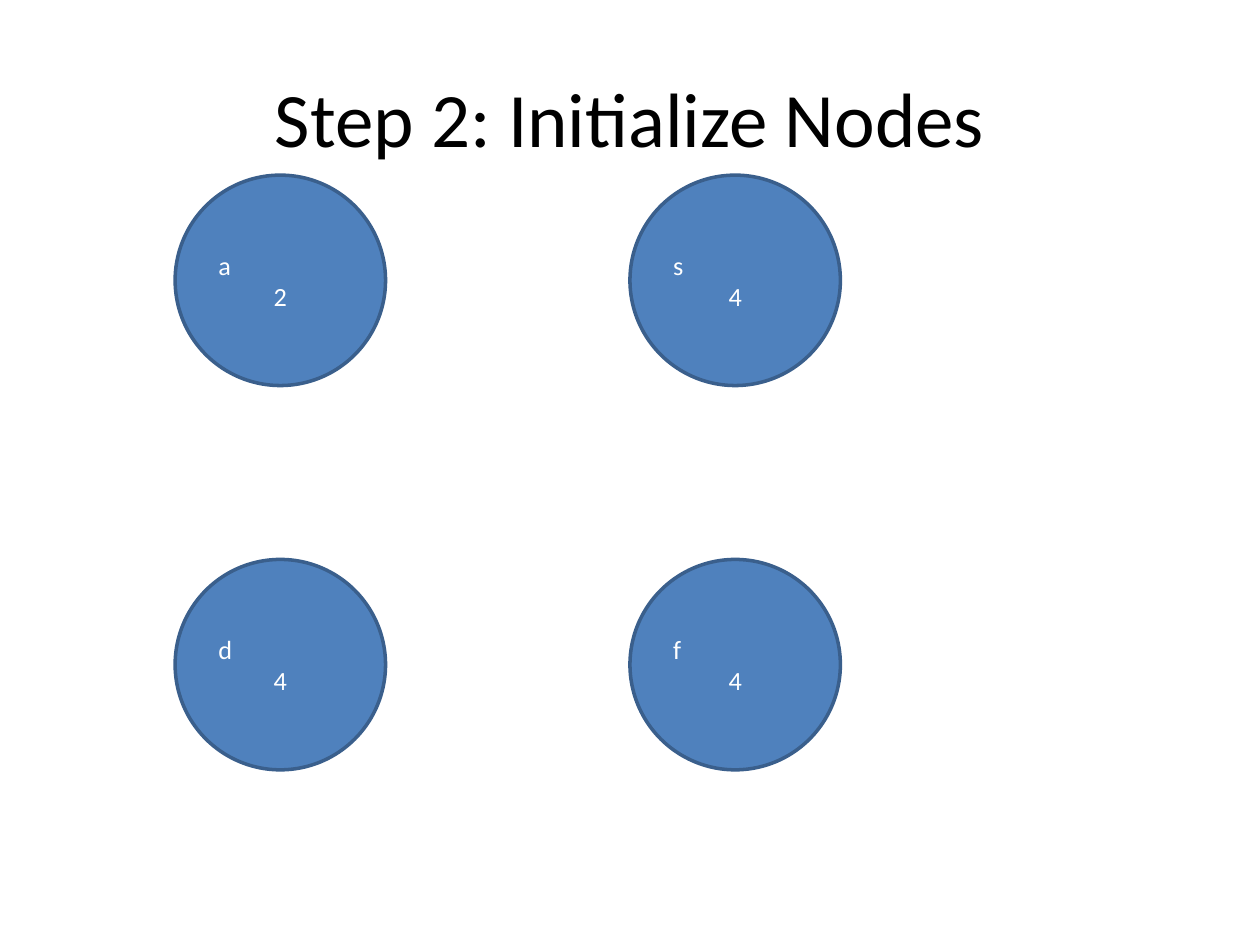
from pptx import Presentation
from pptx.dml.color import RGBColor
from pptx.enum import shapes, text
from pptx.util import Inches, Pt

BLACK = RGBColor(0x00, 0x00, 0x00)
WHITE = RGBColor(0xFF, 0xFF, 0xFF)
NODE_FILL = RGBColor(0x4F, 0x81, 0xBD)
NODE_EDGE = RGBColor(0x3A, 0x5F, 0x8C)
FONT = "Calibri"

DIAMETER = 1.67
COLUMNS = (1.39, 5)
ROWS = (1.39, 4.44)
NODES = ((("a", "2"), ("s", "4")),
         (("d", "4"), ("f", "4")))


def style_paragraph(paragraph, size, color, alignment):
    paragraph.alignment = alignment
    for run in paragraph.runs:
        run.font.name = FONT
        run.font.size = Pt(size)
        run.font.color.rgb = color


def add_title(slide, wording):
    title = slide.shapes.add_textbox(Inches(0.5), Inches(0.3), Inches(9), Inches(1.25))
    frame = title.text_frame
    frame.word_wrap = True
    frame.vertical_anchor = text.MSO_ANCHOR.MIDDLE
    frame.text = wording
    style_paragraph(frame.paragraphs[0], 44, BLACK, text.PP_ALIGN.CENTER)


def add_node(slide, left, top, letter, frequency):
    node = slide.shapes.add_shape(
        shapes.MSO_SHAPE.OVAL, Inches(left), Inches(top), Inches(DIAMETER), Inches(DIAMETER))
    node.shadow.inherit = False
    node.fill.solid()
    node.fill.fore_color.rgb = NODE_FILL
    node.line.color.rgb = NODE_EDGE
    node.line.width = Pt(2)
    frame = node.text_frame
    frame.word_wrap = True
    frame.vertical_anchor = text.MSO_ANCHOR.MIDDLE
    frame.text = f"{letter}\n{frequency}"
    letter_line, frequency_line = frame.paragraphs
    style_paragraph(letter_line, 15, WHITE, text.PP_ALIGN.LEFT)
    style_paragraph(frequency_line, 15, WHITE, text.PP_ALIGN.CENTER)


def main():
    deck = Presentation()
    deck.slide_width, deck.slide_height = Inches(10), Inches(7.5)
    slide = deck.slides.add_slide(deck.slide_layouts[6])
    add_title(slide, "Step 2: Initialize Nodes")
    for top, row in zip(ROWS, NODES):
        for left, (letter, frequency) in zip(COLUMNS, row):
            add_node(slide, left, top, letter, frequency)
    deck.save("out.pptx")


if __name__ == "__main__":
    main()
